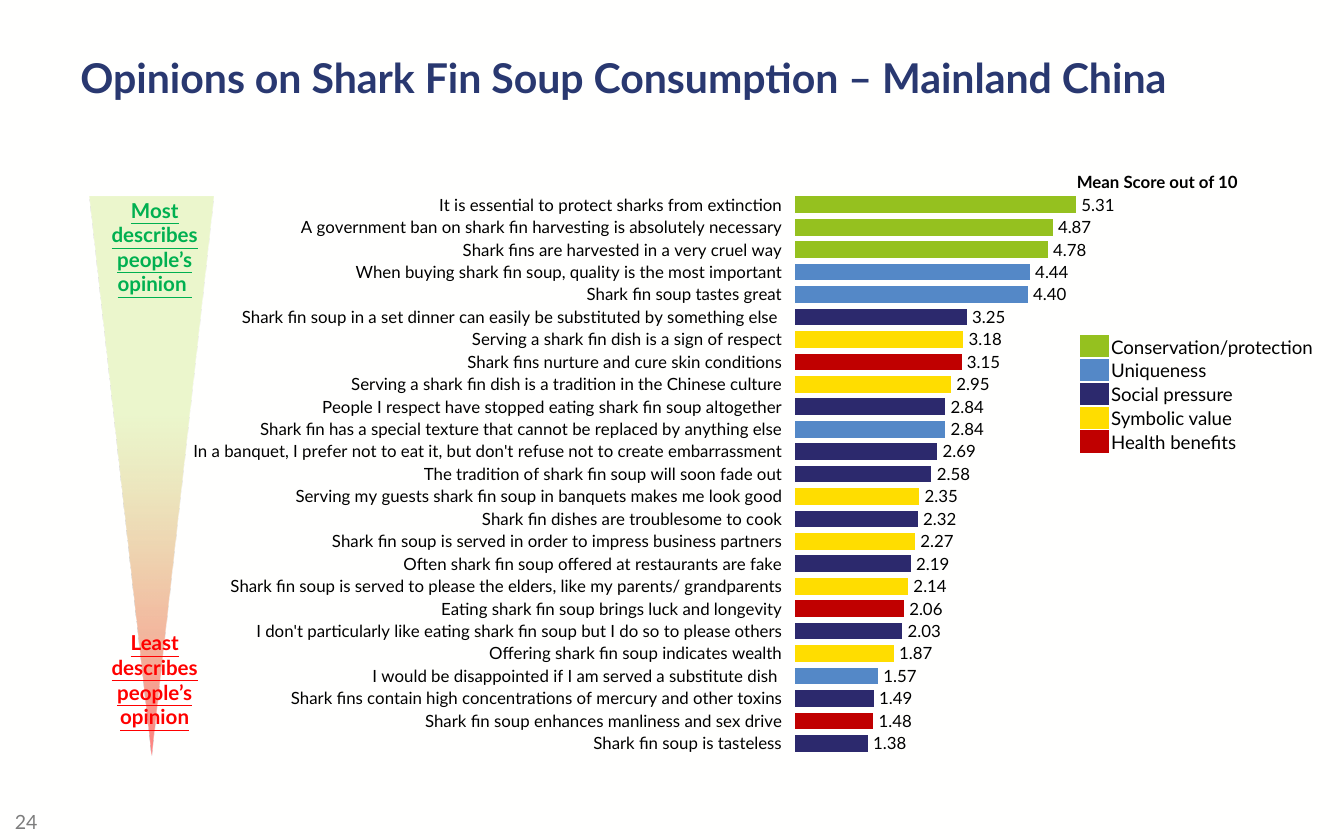
from lxml.etree import SubElement
from pptx import Presentation
from pptx.chart.data import CategoryChartData
from pptx.dml.color import RGBColor
from pptx.enum.chart import XL_CHART_TYPE as ChartType, XL_LABEL_POSITION as LabelPos
from pptx.enum.shapes import MSO_SHAPE as Shape
from pptx.enum.text import MSO_ANCHOR as Anchor, PP_ALIGN as Align
from pptx.oxml import parse_xml
from pptx.oxml.ns import nsdecls, qn
from pptx.util import Cm, Pt

FONT = "Lato"
BACKGROUND = RGBColor(0xFF, 0xFF, 0xFE)
BLACK = RGBColor(0, 0, 0)
NAVY = RGBColor(0x29, 0x38, 0x70)
GREY = RGBColor(0x7D, 0x7D, 0x7D)
MOST_GREEN = RGBColor(0x00, 0xB0, 0x50)
LEAST_RED = RGBColor(0xFF, 0, 0)

CONSERVATION = "Conservation/protection"
UNIQUENESS = "Uniqueness"
PRESSURE = "Social pressure"
SYMBOLIC = "Symbolic value"
HEALTH = "Health benefits"
THEMES = {
    CONSERVATION: RGBColor(0x95, 0xC1, 0x1F),
    UNIQUENESS: RGBColor(0x54, 0x88, 0xC7),
    PRESSURE: RGBColor(0x2C, 0x29, 0x6D),
    SYMBOLIC: RGBColor(0xFF, 0xDD, 0x00),
    HEALTH: RGBColor(0xC0, 0, 0),
}

OPINIONS = [
    ("It is essential to protect sharks from extinction", 5.31, CONSERVATION),
    ("A government ban on shark fin harvesting is absolutely necessary", 4.87, CONSERVATION),
    ("Shark fins are harvested in a very cruel way", 4.78, CONSERVATION),
    ("When buying shark fin soup, quality is the most important", 4.44, UNIQUENESS),
    ("Shark fin soup tastes great", 4.40, UNIQUENESS),
    ("Shark fin soup in a set dinner can easily be substituted by something else ", 3.25, PRESSURE),
    ("Serving a shark fin dish is a sign of respect", 3.18, SYMBOLIC),
    ("Shark fins nurture and cure skin conditions", 3.15, HEALTH),
    ("Serving a shark fin dish is a tradition in the Chinese culture", 2.95, SYMBOLIC),
    ("People I respect have stopped eating shark fin soup altogether", 2.84, PRESSURE),
    ("Shark fin has a special texture that cannot be replaced by anything else", 2.84, UNIQUENESS),
    ("In a banquet, I prefer not to eat it, but don't refuse not to create embarrassment", 2.69, PRESSURE),
    ("The tradition of shark fin soup will soon fade out", 2.58, PRESSURE),
    ("Serving my guests shark fin soup in banquets makes me look good", 2.35, SYMBOLIC),
    ("Shark fin dishes are troublesome to cook", 2.32, PRESSURE),
    ("Shark fin soup is served in order to impress business partners", 2.27, SYMBOLIC),
    ("Often shark fin soup offered at restaurants are fake", 2.19, PRESSURE),
    ("Shark fin soup is served to please the elders, like my parents/ grandparents", 2.14, SYMBOLIC),
    ("Eating shark fin soup brings luck and longevity", 2.06, HEALTH),
    ("I don't particularly like eating shark fin soup but I do so to please others", 2.03, PRESSURE),
    ("Offering shark fin soup indicates wealth", 1.87, SYMBOLIC),
    ("I would be disappointed if I am served a substitute dish ", 1.57, UNIQUENESS),
    ("Shark fins contain high concentrations of mercury and other toxins", 1.49, PRESSURE),
    ("Shark fin soup enhances manliness and sex drive", 1.48, HEALTH),
    ("Shark fin soup is tasteless", 1.38, PRESSURE),
]


def style_font(font, size, color, bold=False, underline=False):
    """Apply the slide font with a size, colour and weight."""
    font.name, font.size, font.bold = FONT, Pt(size), bold
    font.color.rgb = color
    if underline:
        font.underline = True


def write(tf, text, align=Align.LEFT, anchor=Anchor.TOP, **style):
    """Put one formatted paragraph into a text frame."""
    tf.word_wrap = True
    tf.vertical_anchor = anchor
    p = tf.paragraphs[0]
    p.alignment = align
    r = p.add_run()
    r.text = text
    style_font(r.font, **style)


def add_label(s, text, box, **style):
    """Add a text box at the given left, top, width and height in cm."""
    write(s.shapes.add_textbox(*map(Cm, box)).text_frame, text, **style)


def add_wedge(s, box):
    """Add the downward triangle fading from green to red."""
    sp = s.shapes.add_shape(Shape.ISOSCELES_TRIANGLE, *map(Cm, box))
    sp.shadow.inherit = False
    sp.line.fill.background()
    props = sp._element.spPr
    props.find(qn("a:xfrm")).set("flipV", "1")
    props.find(qn("a:prstGeom")).addnext(parse_xml(
        f'<a:gradFill {nsdecls("a")} rotWithShape="1"><a:gsLst>'
        '<a:gs pos="0"><a:srgbClr val="FF8080"/></a:gs>'
        '<a:gs pos="61000"><a:srgbClr val="D9EF9C"><a:alpha val="50000"/></a:srgbClr></a:gs>'
        '</a:gsLst><a:lin ang="5400000" scaled="0"/></a:gradFill>'))


def set_plot_area(chart, x, y, w, h):
    """Fix the inner plot area as fractions of the chart."""
    area = chart._chartSpace.chart.plotArea
    for old in area.findall(qn("c:layout")):
        area.remove(old)
    area.insert(0, parse_xml(
        f'<c:layout {nsdecls("c")}><c:manualLayout><c:layoutTarget val="inner"/>'
        '<c:xMode val="edge"/><c:yMode val="edge"/>'
        f'<c:x val="{x}"/><c:y val="{y}"/><c:w val="{w}"/><c:h val="{h}"/>'
        '</c:manualLayout></c:layout>'))


def add_score_chart(s, box):
    """Add the bar chart of mean scores, coloured by theme."""
    data = CategoryChartData(number_format="0.00")
    names, scores, themes = zip(*OPINIONS)
    data.categories = names
    data.add_series("Series 1", scores)
    chart = s.shapes.add_chart(ChartType.BAR_CLUSTERED, *map(Cm, box), data).chart
    chart.has_legend = chart.has_title = False
    style_font(chart.font, 10, NAVY)
    set_plot_area(chart, 0.578, 0.036, 0.312, 0.928)

    cat, val = chart.category_axis, chart.value_axis
    cat.reverse_order = True
    cat.format.line.fill.background()
    style_font(cat.tick_labels.font, 9, BLACK)
    val.minimum_scale, val.maximum_scale = 0, 7.2
    val.has_major_gridlines = val.visible = False

    plot = chart.plots[0]
    plot.gap_width, plot.overlap, plot.vary_by_categories = 35, 9, False
    series = plot.series[0]
    series.format.fill.solid()
    series.format.fill.fore_color.rgb = THEMES[PRESSURE]
    for i, theme in enumerate(themes):
        if theme != PRESSURE:
            fill = series.points[i].format.fill
            fill.solid()
            fill.fore_color.rgb = THEMES[theme]

    labels = series.data_labels
    labels.show_value, labels.position = True, LabelPos.OUTSIDE_END
    labels.number_format, labels.number_format_is_linked = "#,##0.00", False
    style_font(labels.font, 9, BLACK)


def set_borders(cell):
    """Draw all four sides of a cell in the background colour."""
    props = cell._tc.get_or_add_tcPr()
    for i, side in enumerate(("lnL", "lnR", "lnT", "lnB")):
        props.insert(i, parse_xml(
            f'<a:{side} {nsdecls("a")} w="12700"><a:solidFill>'
            f'<a:srgbClr val="{BACKGROUND}"/></a:solidFill></a:{side}>'))


def add_theme_key(s, left, top, widths, row_height):
    """Add the table that explains the theme colours."""
    table = s.shapes.add_table(len(THEMES), 2, Cm(left), Cm(top), Cm(sum(widths)),
                               Cm(row_height * len(THEMES))).table
    table.first_row = table.horz_banding = False
    for col, width in zip(table.columns, widths):
        col.width = Cm(width)
    for row, (name, color) in zip(table.rows, THEMES.items()):
        row.height = Cm(row_height)
        swatch, label = row.cells
        swatch.fill.solid()
        swatch.fill.fore_color.rgb = color
        SubElement(swatch.text_frame.paragraphs[0]._p, qn("a:endParaRPr"), sz="800")
        label.fill.background()
        write(label.text_frame, name, size=10, color=BLACK)
        label.vertical_anchor = Anchor.BOTTOM
        for cell in (swatch, label):
            cell.margin_left = cell.margin_right = cell.margin_top = Cm(0.02)
            cell.margin_bottom = 0
            set_borders(cell)


def main():
    """Build the slide and save it."""
    prs = Presentation()
    prs.slide_width, prs.slide_height = Cm(25.4), Cm(15.88)
    s = prs.slides.add_slide(prs.slide_layouts[6])
    s.background.fill.solid()
    s.background.fill.fore_color.rgb = BACKGROUND

    add_label(s, "24", (0.03, 15.19, 1.2, 0.71), size=10.5, color=GREY)
    add_label(s, "Opinions on Shark Fin Soup Consumption – Mainland China",
              (1.27, 0.13, 22.86, 2.64), anchor=Anchor.MIDDLE, size=22, color=NAVY, bold=True)
    add_score_chart(s, (1.68, 3.25, 23.09, 11.43))
    add_wedge(s, (1.7, 3.71, 2.34, 10.57))
    for text, top, color in (("Most describes people’s opinion ", 3.61, MOST_GREEN),
                             ("Least describes people’s opinion", 11.79, LEAST_RED)):
        add_label(s, text, (1.4, top, 3.05, 2.13), align=Align.CENTER,
                  size=11, color=color, bold=True, underline=True)
    add_label(s, "Mean Score out of 10", (19.56, 3.12, 4.62, 0.64),
              align=Align.CENTER, size=9, color=BLACK, bold=True)
    add_theme_key(s, 20.4, 6.32, (0.58, 3.96), 0.45)
    prs.save("out.pptx")


if __name__ == "__main__":
    main()
